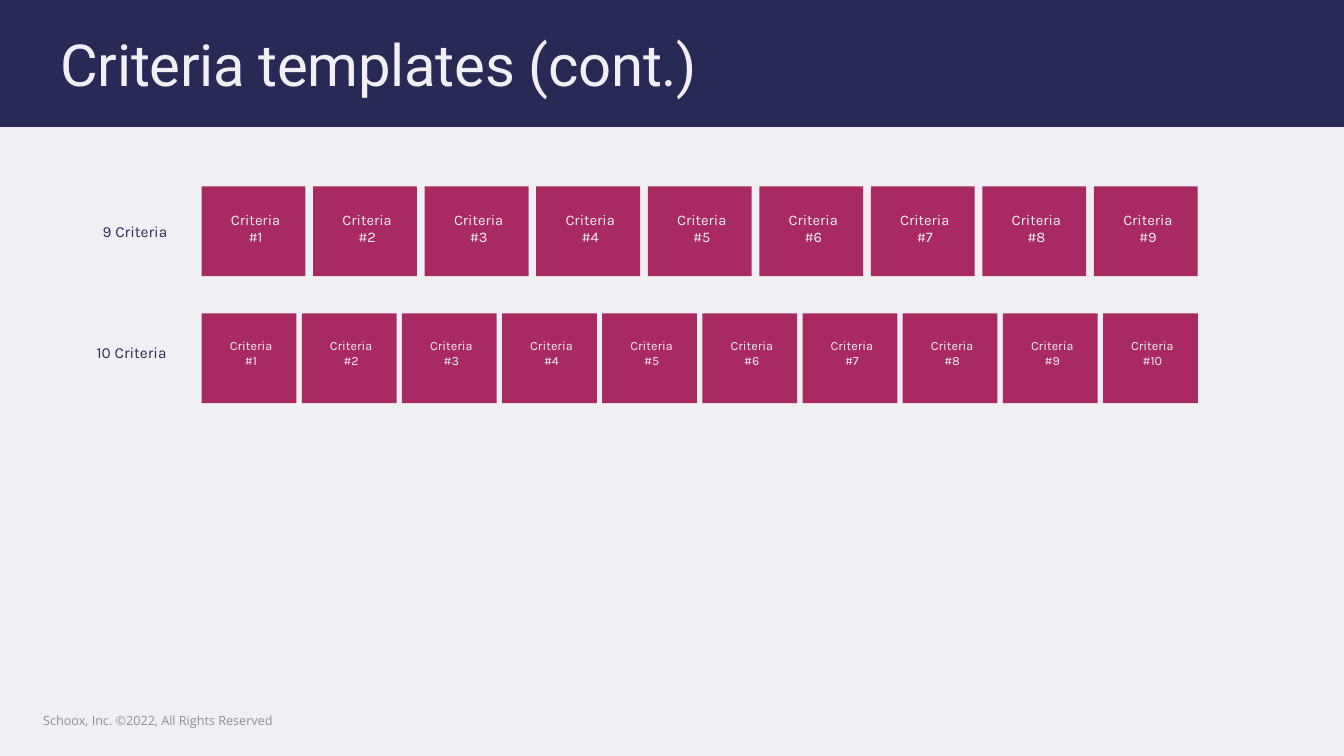
from dataclasses import dataclass

from pptx import Presentation
from pptx.dml.color import RGBColor
from pptx.enum.shapes import MSO_SHAPE
from pptx.enum.text import MSO_ANCHOR, MSO_AUTO_SIZE, PP_ALIGN
from pptx.shapes.base import BaseShape
from pptx.slide import Slide
from pptx.util import Inches, Pt

COLORS = {
    "page": "F0F0F4",
    "navy": "292956",
    "berry": "A82A60",
    "gray": "8E8E9A",
}


@dataclass(frozen=True)
class Area:
    left: float
    top: float
    width: float
    height: float

    def lengths(self) -> tuple[int, ...]:
        return tuple(map(Inches, (self.left, self.top, self.width, self.height)))


@dataclass(frozen=True)
class TextStyle:
    font: str
    size: float
    color: str
    align: PP_ALIGN = PP_ALIGN.LEFT
    anchor: MSO_ANCHOR = MSO_ANCHOR.TOP


@dataclass(frozen=True)
class CriteriaRow:
    """A row of tiles; tile and caption are the first ones of the row."""

    count: int
    label: Area
    tile: Area
    caption: Area
    caption_size: float


ROW_RIGHT = 11.88
ROWS = [
    CriteriaRow(9, Area(0.92, 2.15, 0.97, 0.29), Area(2, 1.85, 1.03, 0.89),
                Area(2.15, 2.04, 0.77, 0.47), 10.5),
    CriteriaRow(10, Area(0.86, 3.35, 1.09, 0.29), Area(2, 3.11, 0.94, 0.89),
                Area(2.14, 3.3, 0.7, 0.4), 9),
]
LABEL_STYLE = TextStyle("Karla", 11, "navy")
FOOTER_STYLE = TextStyle("Open Sans", 9, "gray", anchor=MSO_ANCHOR.MIDDLE)
TITLE_STYLE = TextStyle("Roboto", 41.4, "page", anchor=MSO_ANCHOR.MIDDLE)


def rgb(name: str) -> RGBColor:
    return RGBColor.from_string(COLORS[name])


def write_text(box: BaseShape, text: str, style: TextStyle) -> None:
    frame = box.text_frame
    frame.text = text
    frame.word_wrap = True
    frame.auto_size = MSO_AUTO_SIZE.NONE
    frame.vertical_anchor = style.anchor
    para = frame.paragraphs[0]
    para.alignment = style.align
    font = para.runs[0].font
    font.name = style.font
    font.size = Pt(style.size)
    font.color.rgb = rgb(style.color)


def add_text(page: Slide, area: Area, text: str, style: TextStyle) -> None:
    write_text(page.shapes.add_textbox(*area.lengths()), text, style)


def add_block(page: Slide, area: Area, color: str) -> None:
    block = page.shapes.add_shape(MSO_SHAPE.RECTANGLE, *area.lengths())
    block.shadow.inherit = False
    block.fill.solid()
    block.fill.fore_color.rgb = rgb(color)
    block.line.fill.background()


def add_title(page: Slide, text: str) -> None:
    """Place the title in front of the header band."""
    title = page.shapes.title
    title.left, title.top, title.width, title.height = Area(0.5, 0.21, 10.96, 0.83).lengths()
    write_text(title, text, TITLE_STYLE)
    span = title.text_frame.paragraphs[0].runs[0]
    span.font._element.set("spc", "-20")
    page.shapes._spTree.append(title._element)


def add_criteria_row(page: Slide, row: CriteriaRow) -> None:
    add_text(page, row.label, f"{row.count} Criteria", LABEL_STYLE)
    caption_style = TextStyle("Karla", row.caption_size, "page", PP_ALIGN.CENTER)
    tile, caption = row.tile, row.caption
    pitch = (ROW_RIGHT - tile.width - tile.left) / (row.count - 1)
    for index in range(row.count):
        shift = index * pitch
        add_block(page, Area(tile.left + shift, tile.top, tile.width, tile.height), "berry")
        add_text(page, Area(caption.left + shift, caption.top, caption.width, caption.height),
                 f"Criteria #{index + 1}", caption_style)


def main() -> None:
    deck = Presentation()
    deck.slide_width = Inches(13.33)
    deck.slide_height = Inches(7.5)
    page = deck.slides.add_slide(deck.slide_layouts.get_by_name("Title Only"))
    page.background.fill.solid()
    page.background.fill.fore_color.rgb = rgb("page")

    add_block(page, Area(0, 0, 13.33, 1.26), "navy")
    add_text(page, Area(0.33, 6.95, 3, 0.4),
             "Schoox, Inc. ©2022, All Rights Reserved", FOOTER_STYLE)
    for row in ROWS:
        add_criteria_row(page, row)
    add_title(page, "Criteria templates (cont.)")
    deck.save("out.pptx")


if __name__ == "__main__":
    main()
